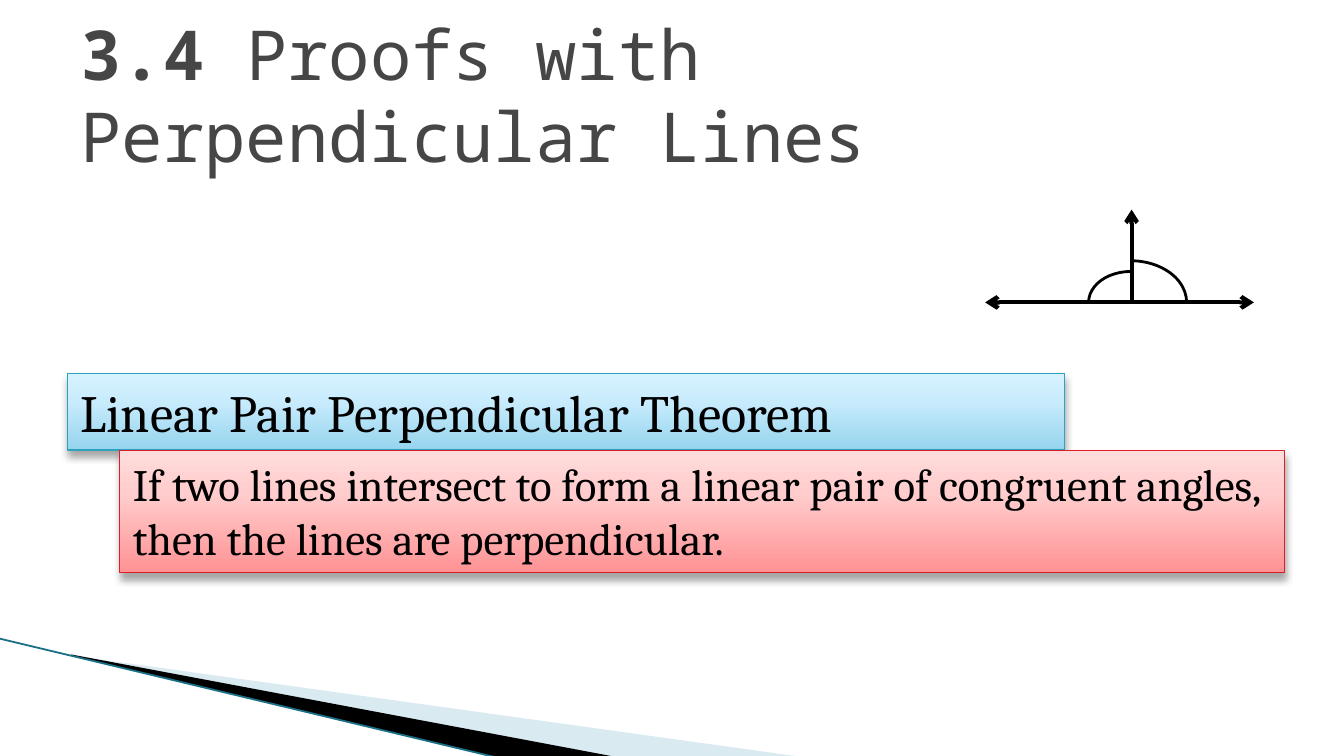
from pptx import Presentation
from pptx.dml.color import RGBColor
from pptx.enum.shapes import MSO_CONNECTOR, MSO_SHAPE
from pptx.enum.text import MSO_ANCHOR, MSO_AUTO_SIZE, PP_ALIGN
from pptx.oxml.ns import qn
from pptx.util import Inches, Pt
from lxml.etree import SubElement

BLACK = RGBColor(0x00, 0x00, 0x00)
GREY = RGBColor(0x46, 0x46, 0x46)
PALE_BLUE = RGBColor(0xA0, 0xCB, 0xDC)
DARK_TEAL = RGBColor(0x1B, 0x70, 0x86)
TEAL = RGBColor(0x2D, 0xA2, 0xBF)
RED = RGBColor(0xDA, 0x1F, 0x28)
BLUES = [RGBColor(0x96, 0xD4, 0xEE), RGBColor(0xC9, 0xEC, 0xFC), RGBColor(0xD7, 0xF2, 0xFF)]
PINKS = [RGBColor(0xFF, 0x92, 0x94), RGBColor(0xFF, 0xCD, 0xCD), RGBColor(0xFF, 0xDC, 0xDC)]
STOPS = [0, 65, 100]


def set_attrs(obj, values):
    for name, value in values.items():
        setattr(obj, name, value)


def set_alpha(clr, alpha):
    SubElement(clr, qn("a:alpha"), val=str(alpha * 1000))


def add_color(parent, color):
    return SubElement(parent, qn("a:srgbClr"), val=str(color))


def add_run(p, text, size, font, color, bold=False):
    r = p.add_run()
    r.text = text
    set_attrs(r.font, {"size": Pt(size), "name": font, "bold": bold})
    r.font.color.rgb = color


def set_line(sp, color, width):
    sp.line.color.rgb = color
    sp.line.width = Pt(width)


def add_wedge(s, points, color, alpha=100):
    corners = [(Inches(x), Inches(y)) for x, y in points]
    builder = s.shapes.build_freeform(*corners[0])
    builder.add_line_segments(corners[1:], close=True)
    sp = builder.convert_to_shape()
    sp.shadow.inherit = False
    sp.line.fill.background()
    sp.fill.solid()
    sp.fill.fore_color.rgb = color
    if alpha < 100:
        set_alpha(sp._element.spPr.find(".//" + qn("a:srgbClr")), alpha)


def add_line(shapes, start, end, color, width, arrows=()):
    points = [Inches(v) for v in (*start, *end)]
    line = shapes.add_connector(MSO_CONNECTOR.STRAIGHT, *points)
    set_line(line, color, width)
    ln = line._element.spPr.find(qn("a:ln"))
    for arrow in arrows:
        SubElement(ln, qn(arrow), type="arrow")
    SubElement(line._element.spPr, qn("a:effectLst"))


def add_arc(shapes, box, flipped=False):
    sp = shapes.add_shape(MSO_SHAPE.ARC, *[Inches(v) for v in box])
    sp.shadow.inherit = False
    sp.fill.background()
    set_line(sp, BLACK, 1.5)
    if flipped:
        sp._element.spPr.get_or_add_xfrm().set("flipH", "1")


def add_angle_diagram(s):
    shapes = s.shapes.add_group_shape().shapes
    add_line(shapes, (7.33, 2.25), (9.33, 2.25), BLACK, 2.25, ["a:headEnd", "a:tailEnd"])
    add_line(shapes, (8.42, 2.25), (8.42, 1.56), BLACK, 2.25, ["a:tailEnd"])
    add_arc(shapes, (8, 1.94, 0.83, 0.62))
    add_arc(shapes, (8.1, 2.02, 0.63, 0.46), flipped=True)


def add_title(s):
    sp = s.shapes.title
    set_attrs(sp, {"left": Inches(0.5), "top": Inches(0.23),
                   "width": Inches(9), "height": Inches(0.94)})
    tf = sp.text_frame
    set_attrs(tf, {"word_wrap": True, "auto_size": MSO_AUTO_SIZE.NONE,
                   "vertical_anchor": MSO_ANCHOR.MIDDLE})
    p = tf.paragraphs[0]
    p.alignment = PP_ALIGN.LEFT
    add_run(p, "3.4 ", 36.9, "Noto Sans Mono", GREY, bold=True)
    add_run(p, "Proofs with Perpendicular Lines", 36.9, "Noto Sans Mono", GREY)


def add_banner(s, box, text, size, colors, edge):
    sp = s.shapes.add_shape(MSO_SHAPE.RECTANGLE, *[Inches(v) for v in box])
    set_line(sp, edge, 0.75)
    sp.fill.gradient()
    sp.fill.gradient_angle = 90
    spPr = sp._element.spPr
    stops = spPr.find(".//" + qn("a:gsLst"))
    for stop in list(stops):
        stops.remove(stop)
    for pos, color in zip(STOPS, colors):
        add_color(SubElement(stops, qn("a:gs"), pos=str(pos * 1000)), color)

    sp.shadow.inherit = False
    shadow = SubElement(spPr.find(qn("a:effectLst")), qn("a:outerShdw"),
                        blurRad=str(Pt(4)), dist=str(Pt(3)), dir="5400000", rotWithShape="0")
    set_alpha(add_color(shadow, BLACK), 35)

    tf = sp.text_frame
    set_attrs(tf, {"word_wrap": True, "auto_size": MSO_AUTO_SIZE.SHAPE_TO_FIT_TEXT,
                   "vertical_anchor": MSO_ANCHOR.TOP})
    p = tf.paragraphs[0]
    p.alignment = PP_ALIGN.LEFT
    add_run(p, text, size, "Cambria", BLACK)


def main():
    prs = Presentation()
    set_attrs(prs, {"slide_width": Inches(10), "slide_height": Inches(10 * 9 / 16)})
    s = prs.slides.add_slide(prs.slide_layouts[5])
    add_wedge(s, [(0.55, 4.88), (5.95, 5.63), (4.56, 5.63)], PALE_BLUE, 40)
    add_wedge(s, [(0.53, 4.87), (4.57, 5.63), (3.72, 5.64), (0.54, 4.88)], BLACK)
    add_line(s.shapes, (-0.01, 4.75), (3.71, 5.64), DARK_TEAL, 0.95)
    add_title(s)
    add_angle_diagram(s)
    add_banner(s, (0.5, 2.78, 7.42, 0.57), "Linear Pair Perpendicular Theorem",
               28, BLUES, TEAL)
    add_banner(s, (0.89, 3.35, 8.67, 0.91),
               "If two lines intersect to form a linear pair of congruent angles, "
               "then the lines are perpendicular.", 24, PINKS, RED)
    prs.save("out.pptx")


if __name__ == "__main__":
    main()
